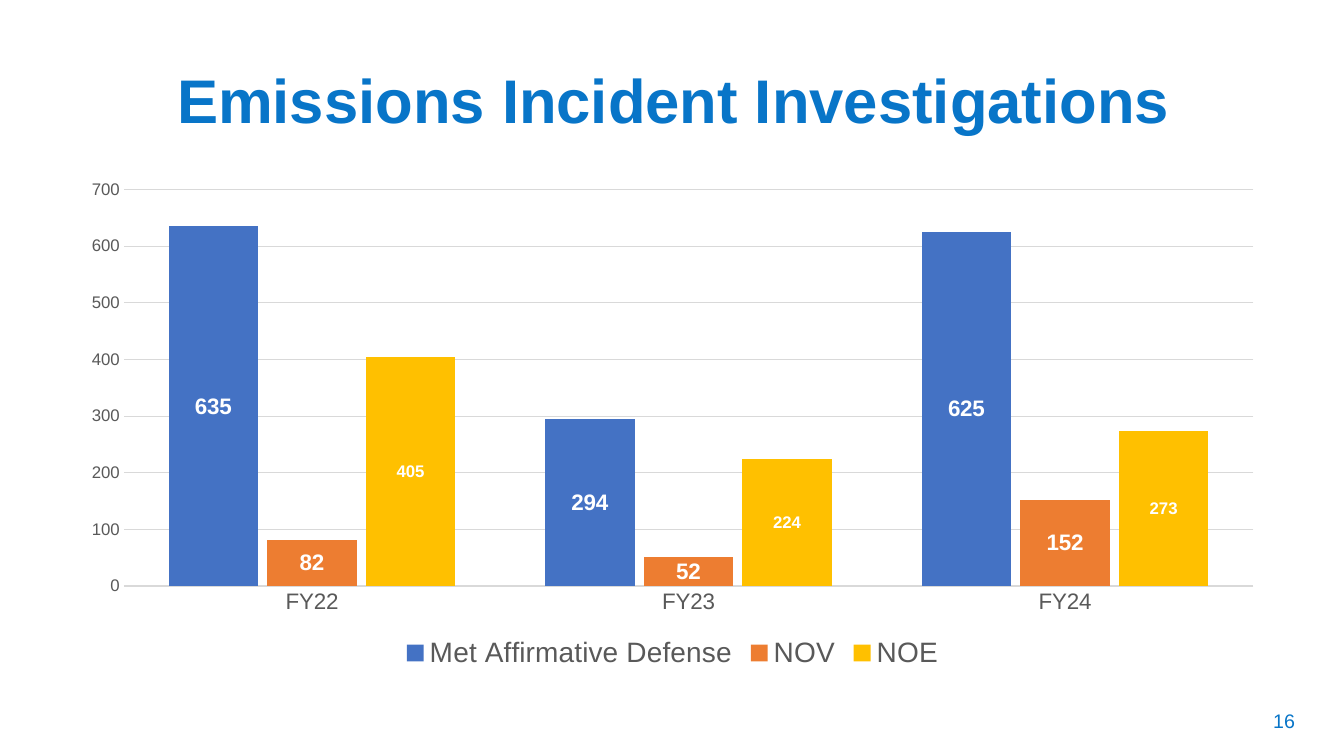
import pptx
import pptx.util
import pptx.chart.data
import pptx.dml.color
import pptx.enum.chart
import pptx.enum.text
from pptx.util import Inches

XL = pptx.enum.chart
FONT = "Arial"
BLUE, GREY, RULE, WHITE = "0875C8", "595959", "D9D9D9", "FFFFFF"

YEARS = ["FY22", "FY23", "FY24"]
SERIES = [
    ("Met Affirmative Defense", [635, 294, 625], "4472C4", 16),
    ("NOV", [82, 52, 152], "ED7D31", 16),
    ("NOE", [405, 224, 273], "FFC000", 12),
]


def rgb(value):
    return pptx.dml.color.RGBColor.from_string(value)


def set_attrs(obj, values):
    for name, value in values.items():
        setattr(obj, name, value)


def style(font, size, color, bold=False):
    set_attrs(font, {"name": FONT, "size": pptx.util.Pt(size), "bold": bold})
    font.color.rgb = rgb(color)


class Deck:
    def __init__(self):
        self.prs = pptx.Presentation()
        set_attrs(self.prs, {"slide_width": Inches(13.33), "slide_height": Inches(7.5)})
        self.s = None

    def add_slide(self):
        self.s = self.prs.slides.add_slide(self.prs.slide_layouts[5])

    def fill_text(self, sp, text, box, size, bold=False, spacing=1.0):
        set_attrs(sp, dict(zip(("left", "top", "width", "height"), map(Inches, box))))
        tf = sp.text_frame
        set_attrs(tf, {
            "word_wrap": True,
            "auto_size": pptx.enum.text.MSO_AUTO_SIZE.NONE,
            "vertical_anchor": pptx.enum.text.MSO_ANCHOR.MIDDLE,
        })
        p = tf.paragraphs[0]
        set_attrs(p, {"alignment": pptx.enum.text.PP_ALIGN.CENTER, "line_spacing": spacing})
        r = p.add_run()
        r.text = text
        style(r.font, size, BLUE, bold)

    def title(self, text, box):
        self.fill_text(self.s.shapes.title, text, box, 44, bold=True, spacing=0.9)

    def page_number(self, text, box):
        self.fill_text(self.s.shapes.add_textbox(*map(Inches, box)), text, box, 14)

    def column_chart(self, categories, series, box):
        data = pptx.chart.data.CategoryChartData(number_format="#,##0")
        data.categories = categories
        for name, values, _, _ in series:
            data.add_series(name, values)
        chart = self.s.shapes.add_chart(
            XL.XL_CHART_TYPE.COLUMN_CLUSTERED, *map(Inches, box), data).chart
        style(chart.font, 10, "000000")
        set_attrs(chart, {"has_title": False, "has_legend": True})
        set_attrs(chart.legend, {
            "position": XL.XL_LEGEND_POSITION.BOTTOM, "include_in_layout": False})
        style(chart.legend.font, 20, GREY)
        self.axes(chart)
        plot = chart.plots[0]
        set_attrs(plot, {"gap_width": 100, "overlap": -10, "vary_by_categories": False})
        for ser, (_, _, color, label_size) in zip(plot.series, series):
            ser.invert_if_negative = False
            ser.format.fill.solid()
            ser.format.fill.fore_color.rgb = rgb(color)
            labels = ser.data_labels
            set_attrs(labels, {
                "show_value": True, "position": XL.XL_LABEL_POSITION.CENTER})
            style(labels.font, label_size, WHITE, True)

    def axes(self, chart):
        for axis, size in ((chart.category_axis, 16), (chart.value_axis, 12)):
            set_attrs(axis, {
                "major_tick_mark": XL.XL_TICK_MARK.NONE,
                "minor_tick_mark": XL.XL_TICK_MARK.NONE,
            })
            style(axis.tick_labels.font, size, GREY)
        value_axis = chart.value_axis
        set_attrs(value_axis, {
            "minimum_scale": 0, "maximum_scale": 700, "major_unit": 100,
            "has_major_gridlines": True,
        })
        set_attrs(value_axis.tick_labels, {
            "number_format": "#,##0", "number_format_is_linked": False})
        value_axis.format.line.fill.background()
        for part in (chart.category_axis, value_axis.major_gridlines):
            part.format.line.color.rgb = rgb(RULE)
            part.format.line.width = pptx.util.Pt(0.75)


def main():
    deck = Deck()
    deck.add_slide()
    deck.title("Emissions Incident Investigations", (0.02, 0.67, 13.33, 0.72))
    deck.column_chart(YEARS, SERIES, (0.67, 1.69, 12, 5))
    deck.page_number("16", (12.29, 6.95, 0.89, 0.4))
    deck.prs.save("out.pptx")


if __name__ == "__main__":
    main()
